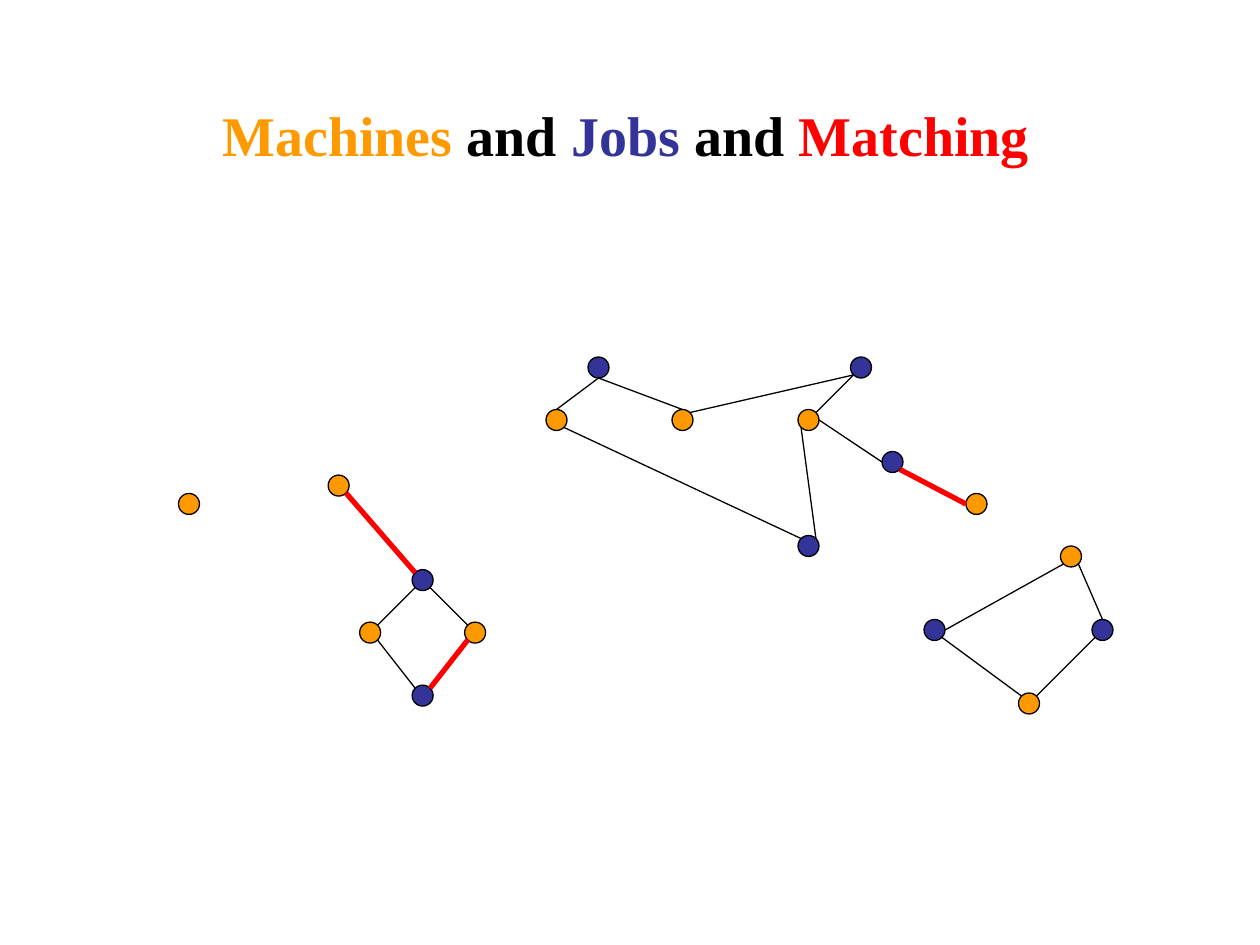
from math import cos, radians, sin

from lxml import etree
from pptx import Presentation
from pptx.dml.color import RGBColor
from pptx.enum import shapes, text
from pptx.oxml.ns import qn
from pptx.util import Pt

ORANGE, BLUE, RED, BLACK = "FF9900", "333399", "FF0000", "000000"
RADIUS = 6

# Node centres, in points
MACHINES = {
    "lone": (108, 288),
    "top 1": (318, 240), "top 2": (390, 240), "top 3": (462, 240),
    "tail": (558, 288),
    "diamond tip": (193.5, 277.5),
    "diamond left": (211.5, 361.5), "diamond right": (271.5, 361.5),
    "kite top": (612, 318), "kite bottom": (588, 402),
}
JOBS = {
    "peak 1": (342, 210), "peak 2": (492, 210),
    "base": (462, 312), "link": (510, 264),
    "diamond top": (241.5, 331.5), "diamond bottom": (241.5, 397.5),
    "kite left": (534, 360), "kite right": (630, 360),
}
NODES = {**MACHINES, **JOBS}

# Compass points on a node's rim, as clockwise angles from east
RIM = {"E": 0, "SE": 45, "S": 90, "SW": 135,
       "W": 180, "NW": 225, "N": 270, "NE": 315}

EDGES = [
    ("top 1", "N", "peak 1", "S"),
    ("peak 1", "S", "top 2", "N"),
    ("top 2", "NE", "peak 2", "SW"),
    ("peak 2", "SW", "top 3", "NE"),
    ("base", "NE", "top 3", "SW"),
    ("base", "NW", "top 1", "SE"),
    ("link", "W", "top 3", "E"),
    ("diamond top", "SE", "diamond right", "NW"),
    ("diamond left", "NE", "diamond top", "SW"),
    ("diamond left", "SE", "diamond bottom", "NW"),
    ("kite left", "SE", "kite bottom", "NW"),
    ("kite bottom", "NE", "kite right", "SW"),
    ("kite top", "SE", "kite right", "N"),
    ("kite left", "E", "kite top", "SW"),
]
MATCHING = [
    ("diamond top", "NW", "diamond tip", "SE"),
    ("diamond bottom", "NE", "diamond right", "SW"),
    ("tail", "W", "link", "SE"),
]
TITLE = [("Machines ", ORANGE), ("and ", BLACK), ("Jobs ", BLUE),
         ("and ", BLACK), ("Matching", RED)]


def color(value):
    return RGBColor.from_string(value)


def add_title(page):
    box = page.shapes.add_textbox(Pt(120), Pt(54), Pt(479.5), Pt(46))
    frame = box.text_frame
    frame.word_wrap = False
    frame.auto_size = text.MSO_AUTO_SIZE.SHAPE_TO_FIT_TEXT
    for words, fill in TITLE:
        span = frame.paragraphs[0].add_run()
        span.text = words
        span.font.name = "Times New Roman"
        span.font.size = Pt(32)
        span.font.bold = True
        span.font.color.rgb = color(fill)


def add_node(page, center, fill):
    x, y = center
    node = page.shapes.add_shape(shapes.MSO_SHAPE.OVAL, Pt(x - RADIUS),
                                 Pt(y - RADIUS), Pt(2 * RADIUS), Pt(2 * RADIUS))
    node.shadow.inherit = False
    node.fill.solid()
    node.fill.fore_color.rgb = color(fill)
    node.line.color.rgb = color(BLACK)
    node.line.width = Pt(0.75)


def rim_point(name, side):
    x, y = NODES[name]
    angle = radians(RIM[side])
    return Pt(x + RADIUS * cos(angle)), Pt(y + RADIUS * sin(angle))


def add_edge(page, edge, stroke, width):
    start, start_side, end, end_side = edge
    line = page.shapes.add_connector(
        shapes.MSO_CONNECTOR.STRAIGHT,
        *rim_point(start, start_side), *rim_point(end, end_side))
    line.line.color.rgb = color(stroke)
    line.line.width = Pt(width)
    etree.SubElement(line._element.spPr, qn("a:effectLst"))


def main():
    deck = Presentation()
    deck.slide_width, deck.slide_height = Pt(720), Pt(540)
    page = deck.slides.add_slide(deck.slide_layouts[6])

    add_title(page)

    # Machines and jobs
    for center in MACHINES.values():
        add_node(page, center, ORANGE)
    for center in JOBS.values():
        add_node(page, center, BLUE)

    # Possible assignments, then the chosen matching
    for edge in EDGES:
        add_edge(page, edge, BLACK, 0.75)
    for edge in MATCHING:
        add_edge(page, edge, RED, 3)

    deck.save("out.pptx")


if __name__ == "__main__":
    main()
